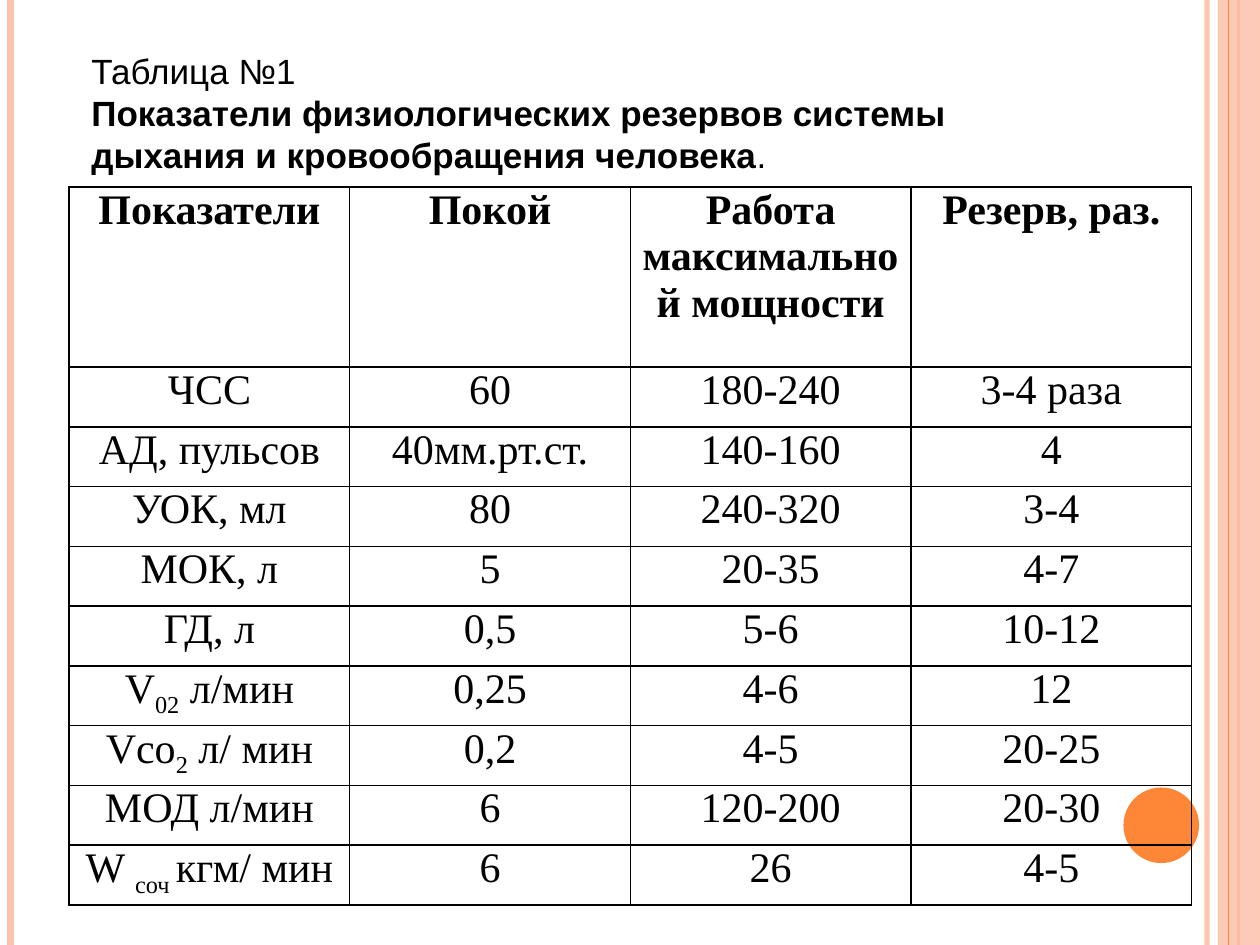
from dataclasses import dataclass

from pptx import Presentation
from pptx.dml.color import RGBColor as Rgb
from pptx.enum.shapes import MSO_CONNECTOR as Conn, MSO_SHAPE as Shape
from pptx.enum.text import MSO_ANCHOR as Anchor, MSO_AUTO_SIZE as Fit, PP_ALIGN as Align
from pptx.oxml.ns import qn
from pptx.util import Pt
from lxml.etree import SubElement


@dataclass(frozen=True)
class Theme:
    ink: Rgb = Rgb.from_string("000000")
    peach: Rgb = Rgb.from_string("FEC3AE")
    orange: Rgb = Rgb.from_string("FE8637")
    head_font: str = "Arial"
    grid_font: str = "Times New Roman"
    head_size: int = 20
    grid_size: int = 24
    sub: str = "-25000"


THEME = Theme()
WIDE, HIGH = 720, 540

# Each line is a list of (text, bold) runs
HEAD = [
    [("Таблица №1", False)],
    [("Показатели физиологических резервов системы", True)],
    [("дыхания и кровообращения человека", True), (".", False)],
]

# A tuple holds text, subscript, text
ROWS = [
    ["Показатели", "Покой", "Работа максимальной мощности", "Резерв, раз."],
    ["ЧСС", "60", "180-240", "3-4 раза"],
    ["АД, пульсов", "40мм.рт.ст.", "140-160", "4"],
    ["УОК, мл", "80", "240-320", "3-4"],
    ["МОК, л", "5", "20-35", "4-7"],
    ["ГД, л", "0,5", "5-6", "10-12"],
    [("V", "02", " л/мин"), "0,25", "4-6", "12"],
    [("Vсо", "2", " л/ мин"), "0,2", "4-5", "20-25"],
    ["МОД л/мин", "6", "120-200", "20-30"],
    [("W ", "соч ", "кгм/ мин"), "6", "26", "4-5"],
]


def add_run(para, text, font, size, bold):
    run = para.add_run()
    run.text = text
    run.font.name, run.font.size, run.font.bold = font, Pt(size), bold
    run.font.color.rgb = THEME.ink
    return run


def fade(part, share):
    """Set the opacity, in percent, of the first solid colour of a part."""
    color = next(part._element.spPr.iter(qn("a:srgbClr")))
    SubElement(color, qn("a:alpha")).set("val", str(share * 1000))


def add_rule(slide, x, top, height, color, width):
    rule = slide.shapes.add_connector(Conn.STRAIGHT, Pt(x), Pt(top), Pt(x), Pt(top + height))
    rule.line.color.rgb, rule.line.width = color, Pt(width)
    SubElement(rule._element.spPr, qn("a:effectLst"))
    return rule


def add_solid(slide, kind, left, top, width, height, color):
    solid = slide.shapes.add_shape(kind, Pt(left), Pt(top), Pt(width), Pt(height))
    solid.shadow.inherit = False
    solid.fill.solid()
    solid.fill.fore_color.rgb = color
    solid.line.fill.background()
    return solid


def add_frame(slide, left, top, width, height):
    """Side stripes and the round accent."""
    right = left + width
    fade(add_rule(slide, right - 30.25, top, height, THEME.peach, 3), 93)
    add_rule(slide, left + 6, top, height, THEME.peach, 4.5)
    add_rule(slide, right - 12.25, top, height, THEME.orange, 1.5)
    fade(add_solid(slide, Shape.RECTANGLE, right - 24, top, 24, height, THEME.peach), 87)
    add_rule(slide, right - 18, top, height, THEME.orange, 0.75)
    add_solid(slide, Shape.OVAL, right - 78, top + 450, 43.2, 43.2, THEME.orange)


def add_head(slide, left, top, width, height):
    """Title lines above the table."""
    title = slide.shapes.title
    title.left, title.top, title.width, title.height = map(Pt, (left, top, width, height))
    frame = title.text_frame
    frame.word_wrap, frame.auto_size = True, Fit.NONE
    frame.vertical_anchor, frame.margin_top = Anchor.TOP, Pt(6)
    for i, line in enumerate(HEAD):
        para = frame.add_paragraph() if i else frame.paragraphs[0]
        para.alignment = Align.LEFT
        for text, bold in line:
            add_run(para, text, THEME.head_font, THEME.head_size, bold)


def add_edges(cell):
    props = cell._tc.get_or_add_tcPr()
    for i, side in enumerate(("lnL", "lnR", "lnT", "lnB")):
        edge = props.makeelement(qn("a:" + side), {"w": str(Pt(1))})
        fill = SubElement(edge, qn("a:solidFill"))
        SubElement(fill, qn("a:srgbClr")).set("val", str(THEME.ink))
        props.insert(i, edge)


def fill_cell(cell, parts, bold):
    cell.fill.background()
    cell.margin_left = cell.margin_right = Pt(5)
    cell.margin_top = cell.margin_bottom = 0
    para = cell.text_frame.paragraphs[0]
    para.alignment = Align.CENTER
    for i, text in enumerate([parts] if isinstance(parts, str) else parts):
        run = add_run(para, text, THEME.grid_font, THEME.grid_size, bold)
        if i == 1:
            run._r.get_or_add_rPr().set("baseline", THEME.sub)
    add_edges(cell)


def add_grid(slide, left, top, width, height, first=103):
    """Table with a tall first row and equal rows below it."""
    count, cols = len(ROWS), len(ROWS[0])
    box = map(Pt, (left, top, width, height))
    table = slide.shapes.add_table(count, cols, *box).table
    table.horz_banding = False
    for col in table.columns:
        col.width = Pt(width / cols)
    for i, row in enumerate(ROWS):
        table.rows[i].height = Pt(first if i == 0 else (height - first) / (count - 1))
        for j, parts in enumerate(row):
            fill_cell(table.cell(i, j), parts, i == 0)


def main():
    deck = Presentation()
    deck.slide_width, deck.slide_height = Pt(WIDE), Pt(HIGH)
    slide = deck.slides.add_slide(deck.slide_layouts[5])
    add_frame(slide, 0, 0, WIDE, HIGH)
    add_grid(slide, 39.5, 106.75, 641.5, 410.5)
    add_head(slide, 45, 22.5, 636, 101.5)
    deck.save("out.pptx")


if __name__ == "__main__":
    main()
